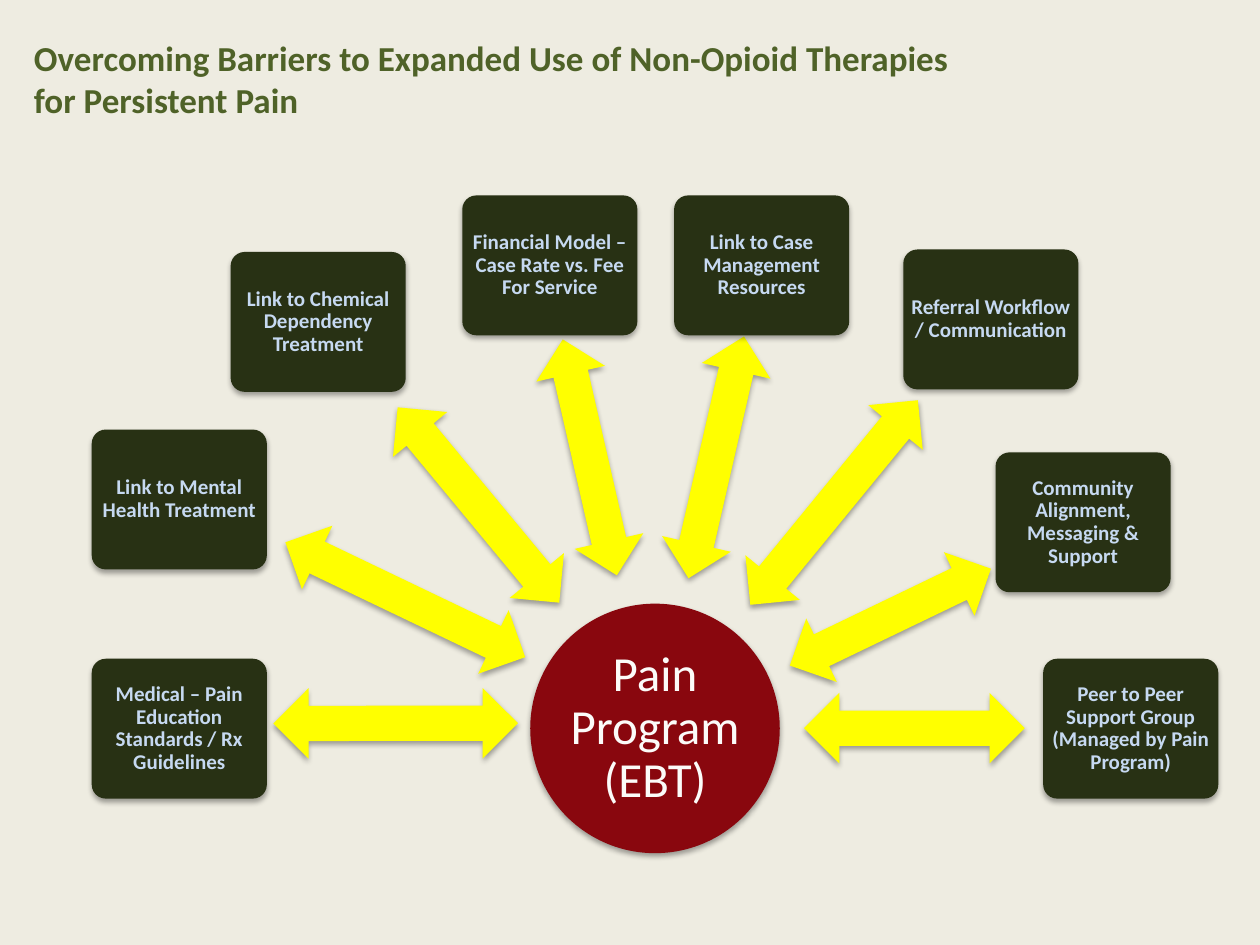
from lxml import etree
from pptx import Presentation
from pptx import util as u
from pptx.dml.color import RGBColor
from pptx.enum import shapes, text
from pptx.oxml import ns

CREAM = RGBColor(0xEE, 0xEC, 0xE1)
RED = RGBColor(0x89, 0x07, 0x0E)
YELLOW = RGBColor(0xFF, 0xFF, 0x00)
DARK_GREEN = RGBColor(0x28, 0x31, 0x14)
TITLE_GREEN = RGBColor(0x4F, 0x62, 0x28)
PALE_BLUE = RGBColor(0xC6, 0xD9, 0xF1)
WHITE = RGBColor(0xFC, 0xFB, 0xF9)

CARD_WIDTH, CARD_HEIGHT, ARROW_HEIGHT = 3.53, 2.82, 1.42

# Card text, card (left, top), arrow (left, top, length, rotation); lengths in cm
TOPICS = [
    ("Medical – Pain Education Standards / Rx Guidelines",
     (1.85, 13.28), (5.51, 13.87, 4.93, 179.9)),
    ("Link to Mental Health Treatment",
     (1.85, 8.66), (5.49, 11.38, 5.36, 205.6)),
    ("Link to Chemical Dependency Treatment",
     (4.65, 5.08), (7.09, 9.47, 5.11, 230.4)),
    ("Financial Model – Case Rate vs. Fee For Service",
     (9.32, 3.94), (9.45, 8.51, 4.88, 257.1)),
    ("Link to Case Management Resources",
     (13.59, 3.94), (11.94, 8.51, 5.0, 282.9)),
    ("Referral Workflow / Communication",
     (18.21, 5.03), (14.15, 9.42, 5.33, 309.3)),
    ("Community Alignment, Messaging & Support",
     (20.07, 9.12), (15.7, 11.73, 4.5, 334.3)),
    ("Peer to Peer Support Group (Managed by Pain Program)",
     (21.03, 13.28), (16.21, 13.97, 4.45, 0)),
]


def add_shadowed(kind, left, top, width, height, color):
    """Add a borderless filled shape with a soft shadow below it."""
    shape = page.shapes.add_shape(
        kind, u.Cm(left), u.Cm(top), u.Cm(width), u.Cm(height))
    shape.fill.solid()
    shape.fill.fore_color.rgb = color
    shape.line.fill.background()
    shape.shadow.inherit = False
    effects = shape.element.spPr.find(ns.qn("a:effectLst"))
    shadow = etree.SubElement(effects, ns.qn("a:outerShdw"), blurRad="40000",
                              dist="23000", dir="5400000", rotWithShape="0")
    black = etree.SubElement(shadow, ns.qn("a:srgbClr"), val="000000")
    etree.SubElement(black, ns.qn("a:alpha"), val="35000")
    return shape


def write_centred(shape, words, margin, font):
    frame = shape.text_frame
    layout = {"word_wrap": True, "vertical_anchor": text.MSO_ANCHOR.MIDDLE,
              "margin_left": margin, "margin_right": margin,
              "margin_top": margin, "margin_bottom": margin}
    for name, value in layout.items():
        setattr(frame, name, value)
    para = frame.paragraphs[0]
    para.alignment = text.PP_ALIGN.CENTER
    para.line_spacing = 0.9
    span = para.add_run()
    span.text = words
    span.font.name = "Calibri"
    span.font.size, span.font.bold, span.font.color.rgb = font


deck = Presentation()
deck.slide_width, deck.slide_height = u.Cm(25.4), u.Cm(19.05)
page = deck.slides.add_slide(deck.slide_layouts[5])
page.background.fill.solid()
page.background.fill.fore_color.rgb = CREAM

title = page.shapes.title
place = {"left": 0.43, "top": 0.61, "width": 23.93, "height": 2.01}
for name, value in place.items():
    setattr(title, name, u.Cm(value))
title.text_frame.text = (
    "Overcoming Barriers to Expanded Use of Non-Opioid Therapies\n"
    "for Persistent Pain")
title.text_frame.vertical_anchor = text.MSO_ANCHOR.TOP
title.text_frame.auto_size = text.MSO_AUTO_SIZE.NONE
for para in title.text_frame.paragraphs:
    para.alignment = text.PP_ALIGN.LEFT
    for span in para.runs:
        for name, value in {"name": "Calibri", "size": u.Pt(20), "bold": True}.items():
            setattr(span.font, name, value)
        span.font.color.rgb = TITLE_GREEN

hub = add_shadowed(shapes.MSO_SHAPE.OVAL, 10.69, 12.17, 5.03, 5.03, RED)
write_centred(hub, "Pain Program (EBT)", 0, (u.Pt(28), False, WHITE))

for words, (card_left, card_top), (left, top, length, rotation) in TOPICS:
    arrow = add_shadowed(shapes.MSO_SHAPE.LEFT_RIGHT_ARROW,
                         left, top, length, ARROW_HEIGHT, YELLOW)
    arrow.rotation = rotation
    card = add_shadowed(shapes.MSO_SHAPE.ROUNDED_RECTANGLE, card_left, card_top,
                        CARD_WIDTH, CARD_HEIGHT, DARK_GREEN)
    card.adjustments[0] = 0.1
    write_centred(card, words, u.Cm(0.05), (u.Pt(12), True, PALE_BLUE))

deck.save("out.pptx")
